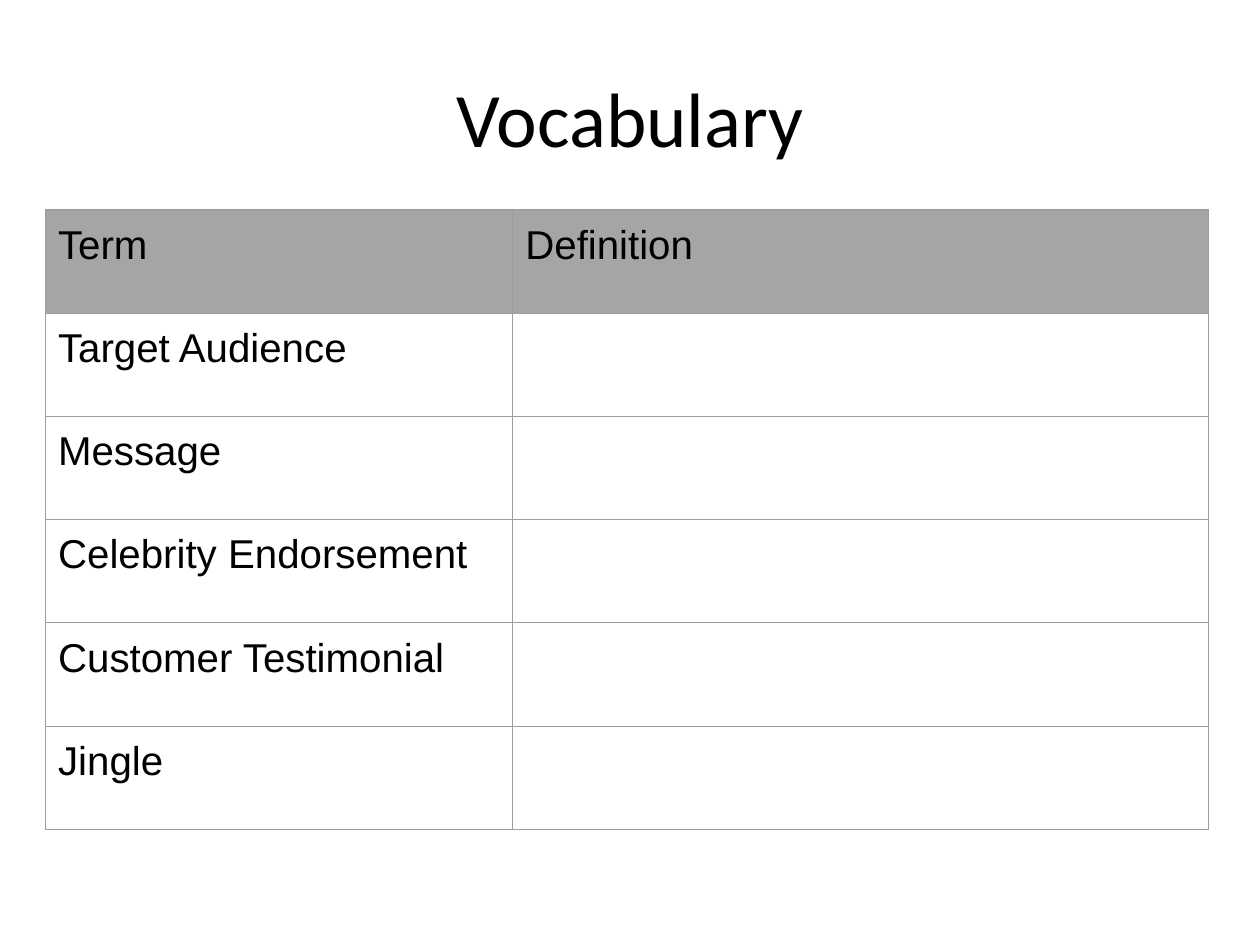
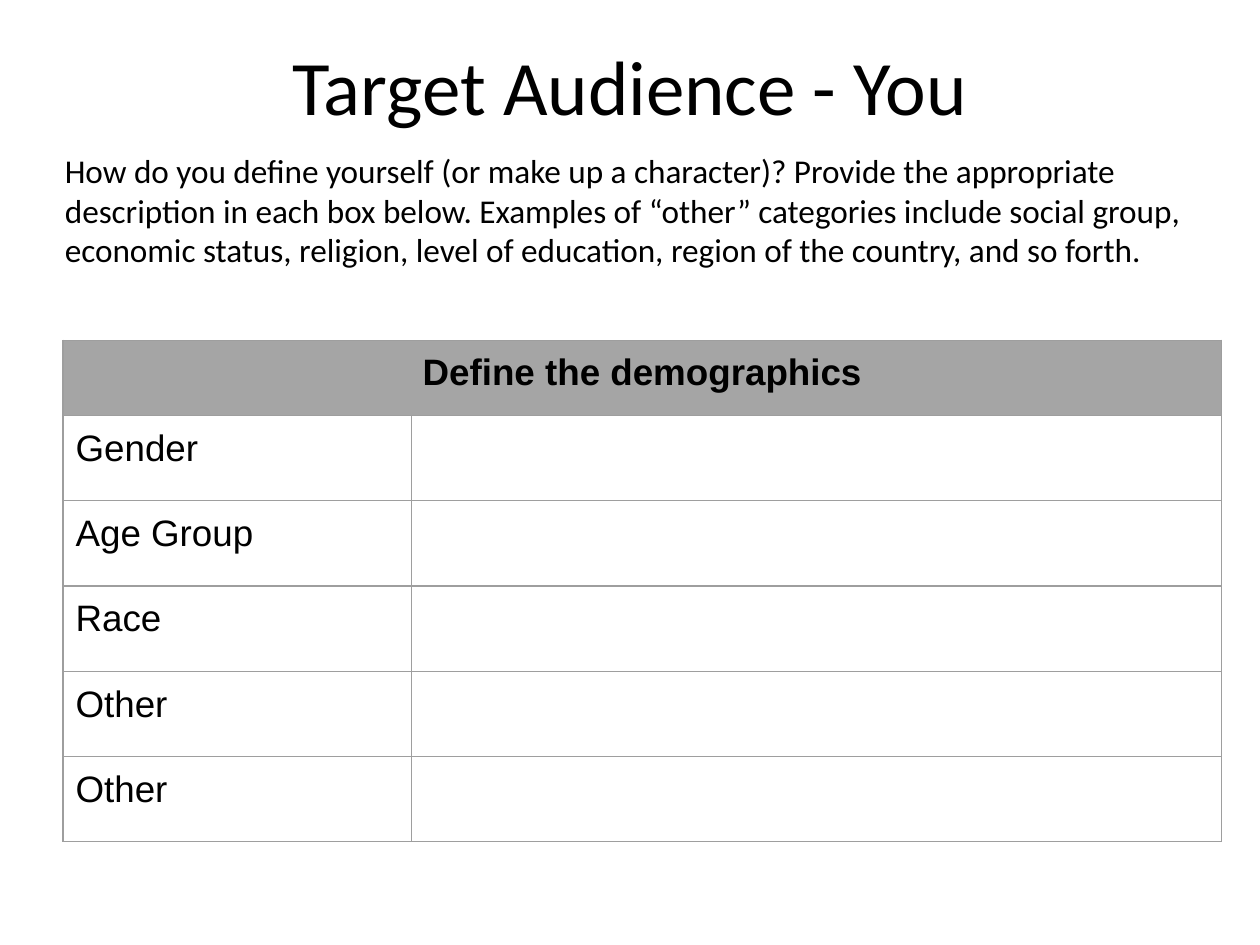
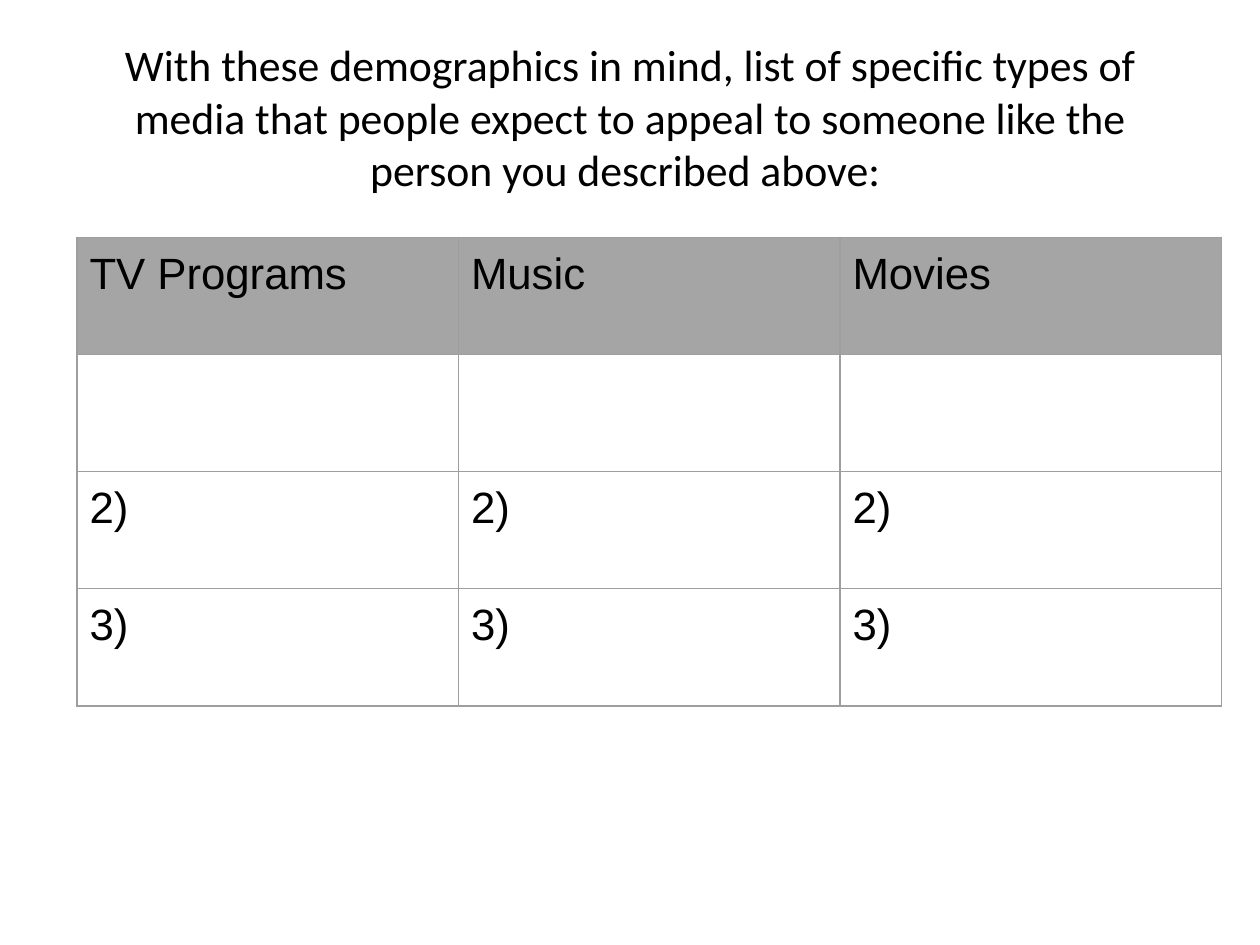
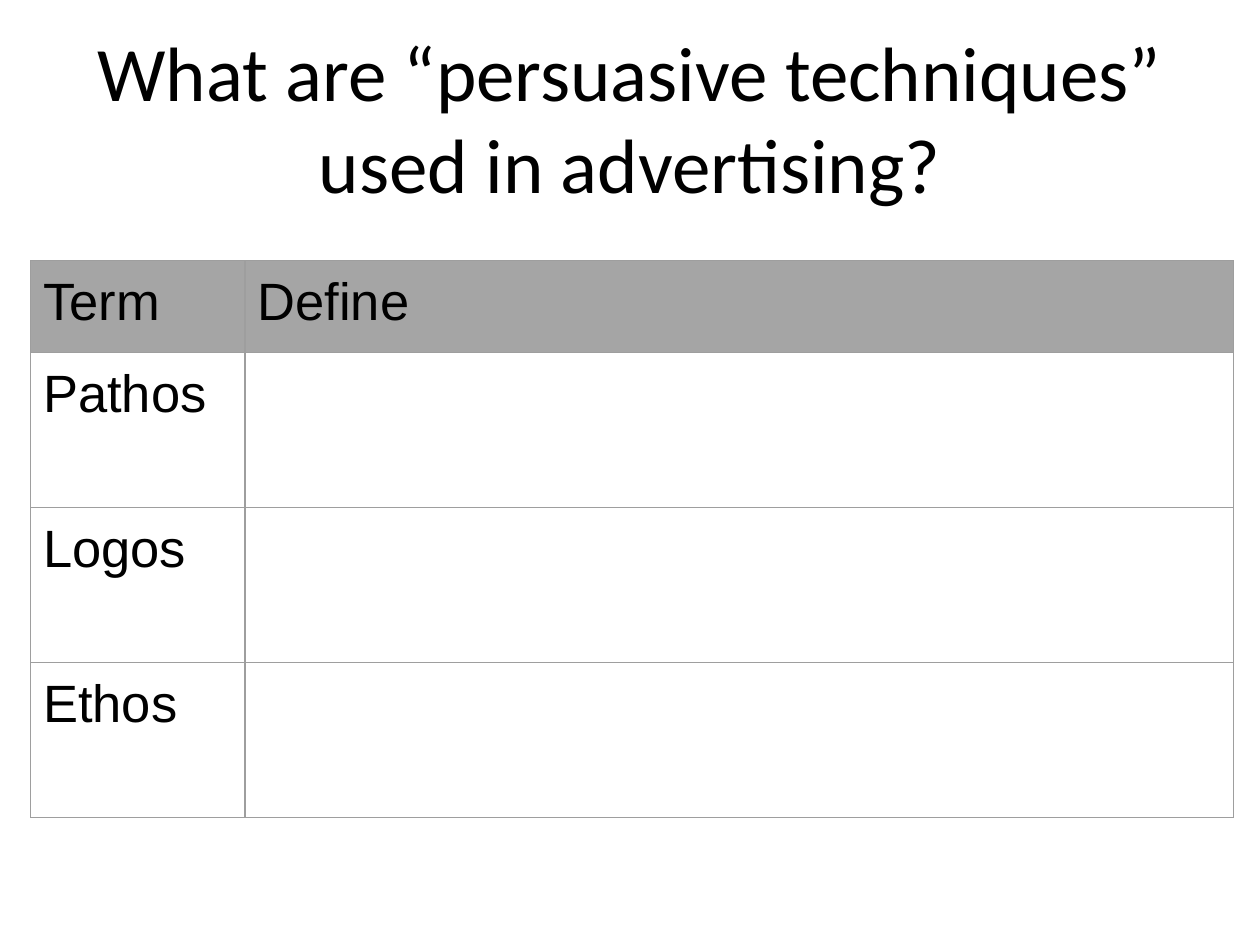
import pptx
import pptx.util
import pptx.dml.color
import pptx.enum.text
import lxml.etree

Pt = pptx.util.Pt
RGB = pptx.dml.color.RGBColor.from_string
TEXT = pptx.enum.text

THEME = {
    "ink": "000000", "head": "A5A5A5", "rule": "9E9E9E",
    "title": "Calibri", "cell": "Arial",
    "big": 44, "small": 25, "note": 19,
    "pad": 7.2, "line": 0.75,
}

# Each table: left and top, column widths, header and row heights, type size.
SLIDES = [
    {
        "title": "Vocabulary",
        "spot": (26, 120), "cols": (267, 397.5), "heights": (59, 59), "size": 23,
        "rows": [("Term", "Definition"), ("Target Audience",), ("Message",),
                 ("Celebrity Endorsement",), ("Customer Testimonial",), ("Jingle",)],
    },
    {
        "title": "Target Audience - You", "top": 3.6,
        "spot": (36, 194.4), "cols": (199, 463), "heights": (43, 48.75), "size": 21,
        "rows": [("Define the demographics",), ("Gender",), ("Age Group",),
                 ("Race",), ("Other",), ("Other",)],
        "span": True,
        "note": "How do you define yourself (or make up a character)? Provide the "
                "appropriate description in each box below. Examples of “other” "
                "categories include social group, economic status, religion, level of "
                "education, region of the country, and so forth.",
        "box": (30, 78.5, 672.5, 83.5),
    },
    {
        "title": "With these demographics in mind, list of specific types of media that "
                 "people expect to appeal to someone like the person you described above: ",
        "kind": "small",
        "spot": (44, 135.5), "cols": (218, 218, 218), "heights": (67, 67), "size": 25,
        "rows": [("TV Programs", "Music", "Movies"), (), ("2)",) * 3, ("3)",) * 3],
    },
    {
        "title": "What are “persuasive techniques” used in advertising?",
        "spot": (17.5, 149), "cols": (122.5, 565), "heights": (52.5, 88.5), "size": 30,
        "rows": [("Term", "Define"), ("Pathos",), ("Logos",), ("Ethos",)],
    },
]


def put(thing, vals):
    for name, val in vals.items():
        setattr(thing, name, val)


def pads(side, end):
    return {"margin_left": Pt(side), "margin_right": Pt(side),
            "margin_top": Pt(end), "margin_bottom": Pt(end)}


def write(frame, text, face, size, align="LEFT", bold=False):
    frame.text = text
    para = frame.paragraphs[0]
    para.alignment = getattr(TEXT.PP_ALIGN, align)
    put(para.font, {"name": face, "size": Pt(size), "bold": bold})
    para.font.color.rgb = RGB(THEME["ink"])


def place(shape, box):
    put(shape, dict(zip(("left", "top", "width", "height"), map(Pt, box))))


def rule(cell):
    """Draw the thin line on all four sides of a cell."""
    props = cell._tc.get_or_add_tcPr()
    for side in ("lnL", "lnR", "lnT", "lnB"):
        line = lxml.etree.SubElement(props, pptx.oxml.ns.qn("a:" + side),
                                     w=str(Pt(THEME["line"])))
        fill = lxml.etree.SubElement(line, pptx.oxml.ns.qn("a:solidFill"))
        lxml.etree.SubElement(fill, pptx.oxml.ns.qn("a:srgbClr"), val=THEME["rule"])


def add_title(slide, page):
    title = slide.shapes.title
    place(title, (36, page.get("top", 21.6), 648, 90))
    frame = title.text_frame
    put(frame, {"word_wrap": True, "auto_size": TEXT.MSO_AUTO_SIZE.NONE,
                "vertical_anchor": TEXT.MSO_ANCHOR.MIDDLE, **pads(7.2, 3.6)})
    write(frame, page["title"], THEME["title"], THEME[page.get("kind", "big")], "CENTER")


def add_grid(slide, page):
    rows, cols = page["rows"], page["cols"]
    first, rest = page["heights"]
    span = page.get("span", False)
    high = first + rest * (len(rows) - 1)
    table = slide.shapes.add_table(len(rows), len(cols), *map(
        Pt, (*page["spot"], sum(cols), high))).table
    put(table, {"first_row": False, "horz_banding": False})
    for col, wide in zip(table.columns, cols):
        col.width = Pt(wide)
    for r, texts in enumerate(rows):
        table.rows[r].height = Pt(rest if r else first)
        for c in range(len(cols)):
            cell = table.cell(r, c)
            put(cell, pads(THEME["pad"], THEME["pad"]))
            rule(cell)
            if r:
                cell.fill.background()
            else:
                cell.fill.solid()
                cell.fill.fore_color.rgb = RGB(THEME["head"])
            if c < len(texts):
                wide = span and r == 0
                write(cell.text_frame, texts[c], THEME["cell"], page["size"],
                      "CENTER" if wide else "LEFT", wide)
    if span:
        table.cell(0, 0).merge(table.cell(0, len(cols) - 1))


def add_note(slide, page):
    frame = slide.shapes.add_textbox(*map(Pt, page["box"])).text_frame
    put(frame, {"word_wrap": True, "auto_size": TEXT.MSO_AUTO_SIZE.SHAPE_TO_FIT_TEXT,
                **pads(THEME["pad"], THEME["pad"])})
    write(frame, page["note"], THEME["title"], THEME["note"])


def main():
    deck = pptx.Presentation()
    put(deck, {"slide_width": Pt(720), "slide_height": Pt(540)})
    for page in SLIDES:
        slide = deck.slides.add_slide(deck.slide_layouts.get_by_name("Title Only"))
        add_title(slide, page)
        add_grid(slide, page)
        if "note" in page:
            add_note(slide, page)
    deck.save("out.pptx")


if __name__ == "__main__":
    main()
